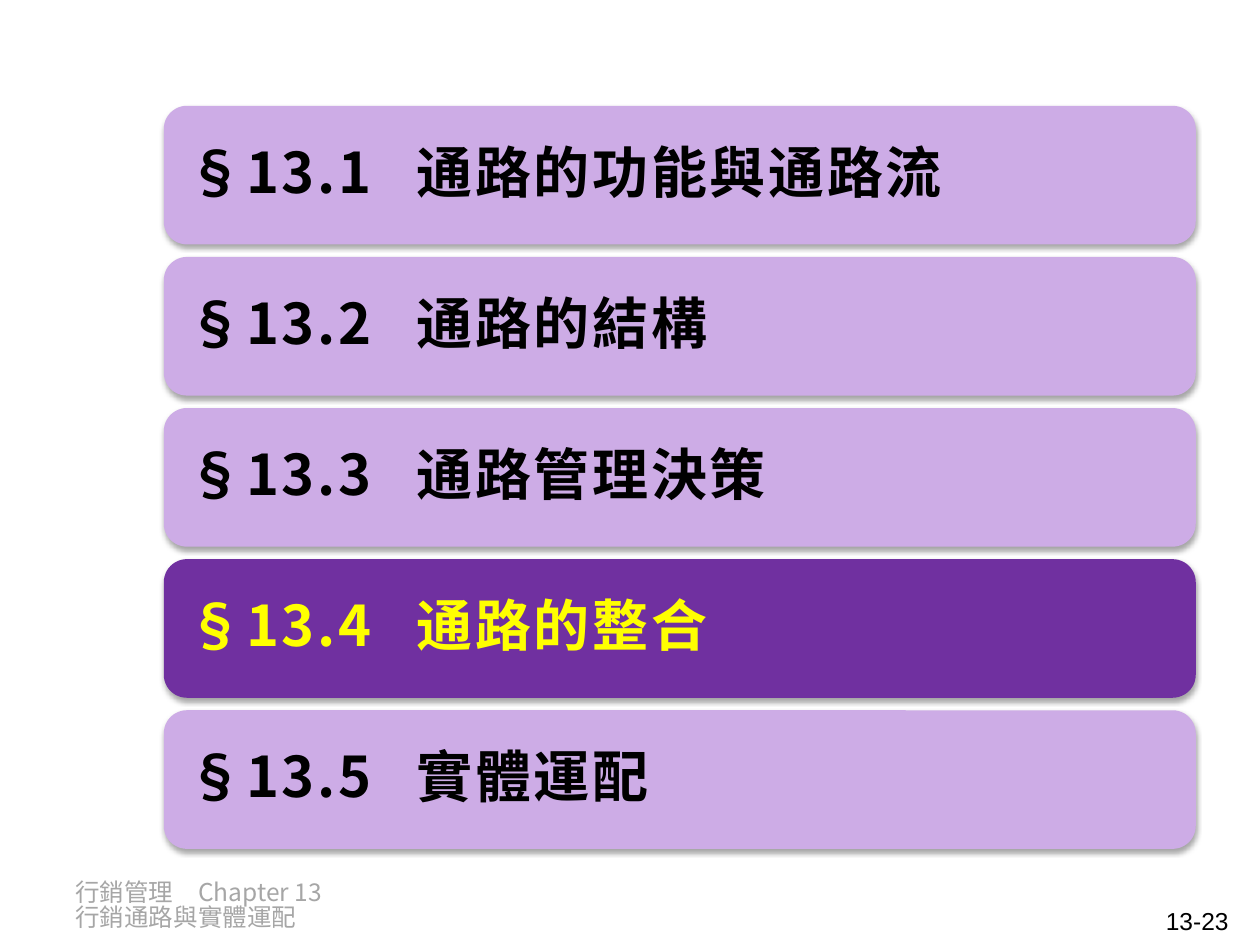
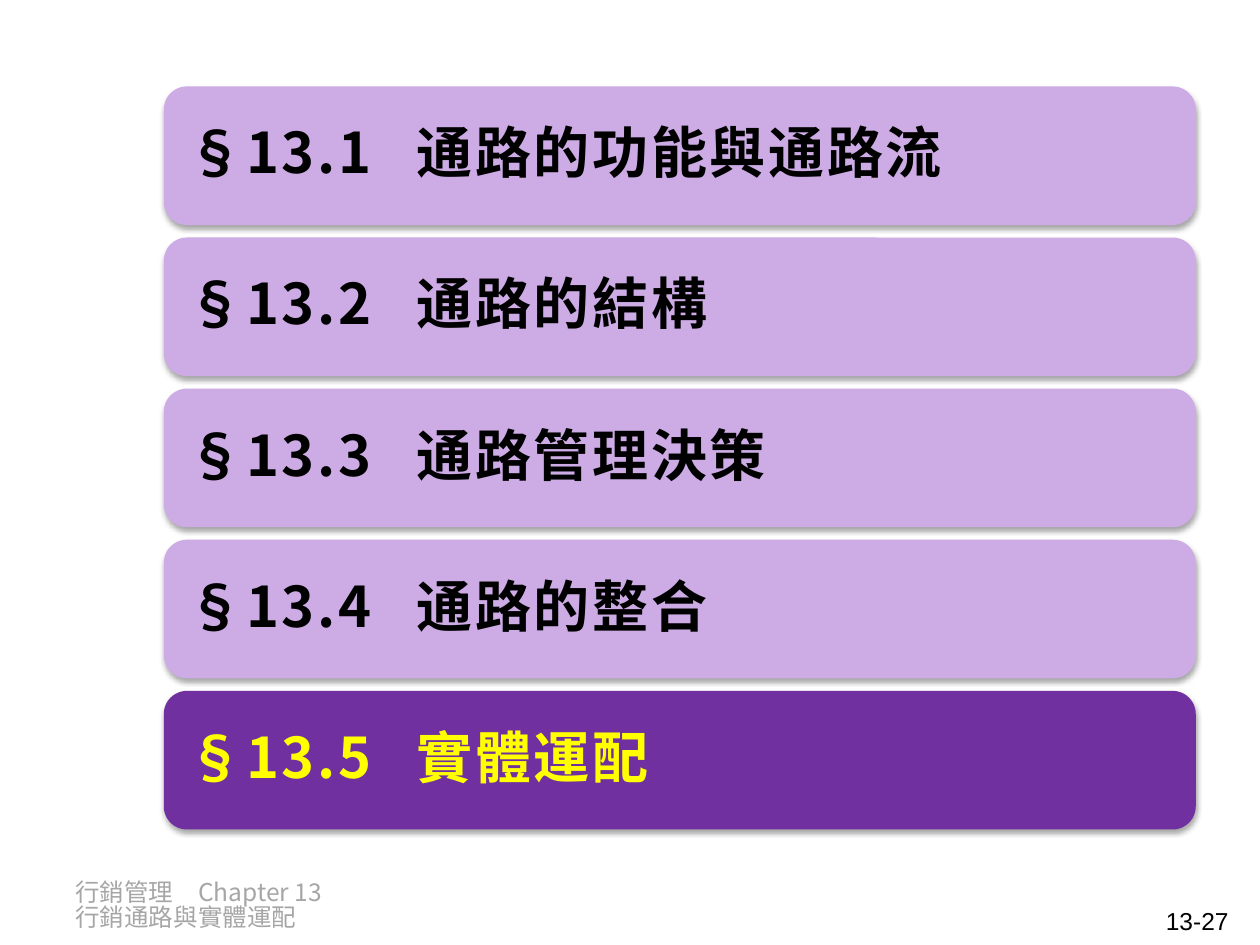
from dataclasses import dataclass

from lxml.etree import SubElement
from pptx import Presentation
from pptx.dml.color import RGBColor
from pptx.enum.shapes import MSO_SHAPE
from pptx.enum.text import MSO_ANCHOR, PP_ALIGN
from pptx.oxml.ns import qn
from pptx.util import Pt


@dataclass(frozen=True)
class Theme:
    cjk_font: str = "Noto Sans CJK SC"
    latin_font: str = "Arial"
    bar: str = "CDACE6"
    bar_text: str = "000000"
    active_bar: str = "7030A0"
    active_text: str = "FFFF00"
    shadow: str = "000000"
    footer: str = "A6A6A6"
    page_number: str = "000000"
    section_size: int = 32
    footer_size: int = 14


SECTIONS = [
    ("§13.1", "通路的功能與通路流"),
    ("§13.2", "通路的結構"),
    ("§13.3", "通路管理決策"),
    ("§13.4", "通路的整合"),
    ("§13.5", "實體運配"),
]
FOOTER = "行銷管理　Chapter 13　行銷通路與實體運配"
BAR_LEFT, BAR_WIDTH, BAR_HEIGHT, BAR_PITCH = 93.6, 589.7, 79.2, 86.35
BAR_INSET = 9.6
NAME_TAB = 131

# page number, top of the first bar, active section
AGENDAS = [("13-23", 60.5, "§13.4"), ("13-27", 49.4, "§13.5")]


class AgendaDeck:
    def __init__(self, theme):
        self.theme = theme
        self.deck = Presentation()
        self.deck.slide_width, self.deck.slide_height = Pt(720), Pt(540)
        self.page = None

    def add_page(self, number):
        """Start a slide with its running footer and page number."""
        self.page = self.deck.slides.add_slide(self.deck.slide_layouts[6])
        theme = self.theme
        para = self.add_label(FOOTER, 36, 500.4, 176.4, 28.8,
                              theme.cjk_font, theme.footer)
        para.line_spacing = 0.85
        para = self.add_label(number, 541.4, 514.1, 167.8, 20.9,
                              theme.latin_font, theme.page_number)
        para.alignment = PP_ALIGN.RIGHT

    def format_span(self, span, font, size, color):
        span.font.name = font
        span.font.size = Pt(size)
        span.font.color.rgb = RGBColor.from_string(color)
        east_asian = SubElement(span.font._element, qn("a:ea"))
        east_asian.set("typeface", self.theme.cjk_font)

    def add_label(self, text, left, top, width, height, font, color):
        box = self.page.shapes.add_textbox(Pt(left), Pt(top), Pt(width), Pt(height))
        box.text_frame.word_wrap = True
        box.text_frame.text = text
        para = box.text_frame.paragraphs[0]
        self.format_span(para.runs[0], font, self.theme.footer_size, color)
        return para

    def add_shadow(self, shape):
        shape.shadow.inherit = False
        effects = shape._element.spPr.find(qn("a:effectLst"))
        shadow = SubElement(effects, qn("a:outerShdw"), blurRad=str(Pt(3.1)),
                            dist=str(Pt(1.8)), dir="5400000", rotWithShape="0")
        color = SubElement(shadow, qn("a:srgbClr"), val=self.theme.shadow)
        SubElement(color, qn("a:alpha"), val="35000")

    def add_section_bar(self, number, name, top, active):
        theme = self.theme
        fill, color = ((theme.active_bar, theme.active_text) if active
                       else (theme.bar, theme.bar_text))
        bar = self.page.shapes.add_shape(
            MSO_SHAPE.ROUNDED_RECTANGLE,
            Pt(BAR_LEFT), Pt(top), Pt(BAR_WIDTH), Pt(BAR_HEIGHT))
        bar.fill.solid()
        bar.fill.fore_color.rgb = RGBColor.from_string(fill)
        bar.line.fill.background()
        self.add_shadow(bar)

        frame = bar.text_frame
        frame.word_wrap = True
        frame.vertical_anchor = MSO_ANCHOR.MIDDLE
        frame.margin_left = frame.margin_right = Pt(BAR_INSET)
        frame.margin_top = frame.margin_bottom = Pt(BAR_INSET)
        para = frame.paragraphs[0]
        para.alignment = PP_ALIGN.LEFT
        para.line_spacing = 0.9
        self.set_section_spacing(para)
        for text, font in ((number + "\t", theme.cjk_font), (name, theme.latin_font)):
            span = para.add_run()
            span.text = text
            self.format_span(span, font, theme.section_size, color)
            span.font.bold = True
            span.font._element.set("spc", "150")

    def set_section_spacing(self, para):
        """Add proportional space after and the tab stop of the section name."""
        properties = para._p.get_or_add_pPr()
        after = SubElement(properties, qn("a:spcAft"))
        SubElement(after, qn("a:spcPct"), val="35000")
        tabs = SubElement(properties, qn("a:tabLst"))
        SubElement(tabs, qn("a:tab"), pos=str(Pt(NAME_TAB)), algn="l")

    def add_agenda(self, first_top, active_number):
        for row, (number, name) in enumerate(SECTIONS):
            self.add_section_bar(number, name, first_top + row * BAR_PITCH,
                                 number == active_number)


def main():
    agenda = AgendaDeck(Theme())
    for page_number, first_top, active_number in AGENDAS:
        agenda.add_page(page_number)
        agenda.add_agenda(first_top, active_number)
    agenda.deck.save("out.pptx")


if __name__ == "__main__":
    main()
